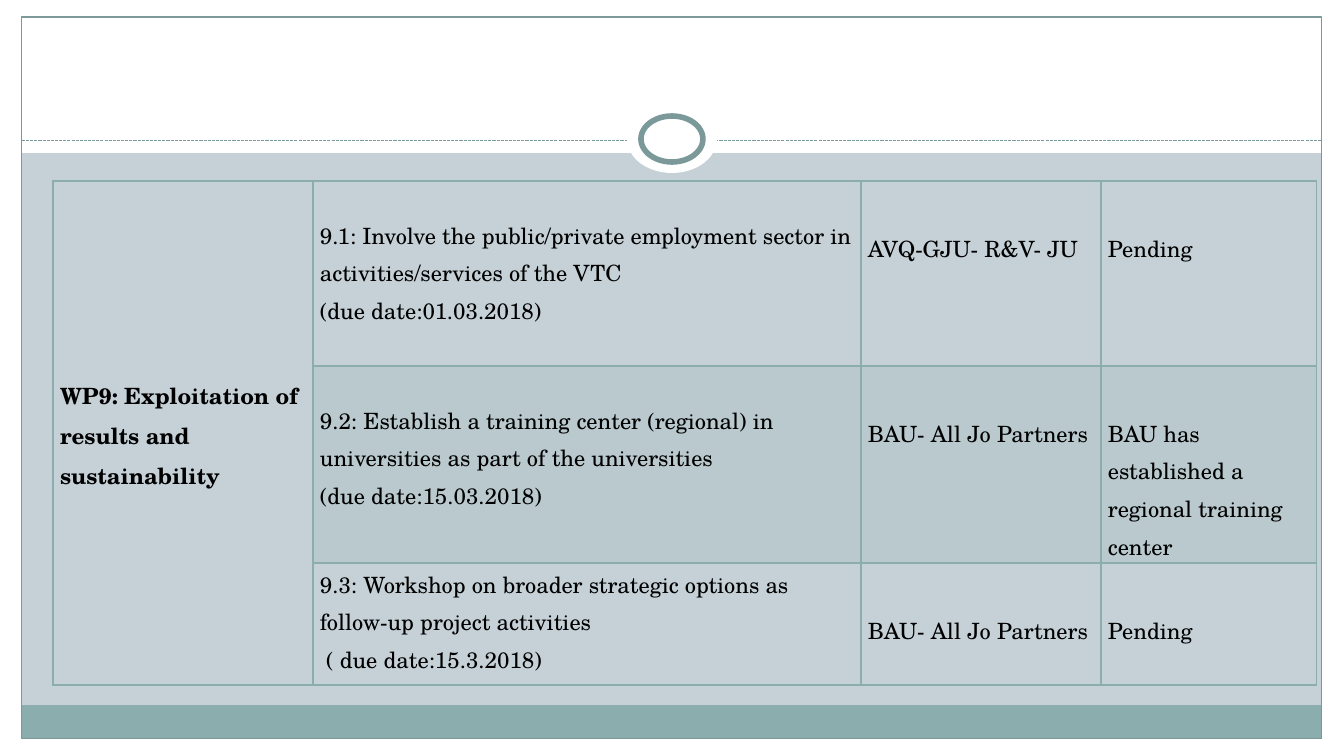
from dataclasses import dataclass

from lxml import etree
from pptx import Presentation
from pptx.dml.color import RGBColor
from pptx.enum.dml import MSO_LINE
from pptx.enum.shapes import MSO_CONNECTOR, MSO_SHAPE
from pptx.enum.text import MSO_ANCHOR, PP_ALIGN
from pptx.oxml.ns import qn
from pptx.util import Pt

RECTANGLE = MSO_SHAPE.RECTANGLE
OVAL = MSO_SHAPE.OVAL
STRAIGHT = MSO_CONNECTOR.STRAIGHT
SHORT_DASH = MSO_LINE.SQUARE_DOT
LEFT = PP_ALIGN.LEFT
TOP = MSO_ANCHOR.TOP
MIDDLE = MSO_ANCHOR.MIDDLE

PX_PER_INCH = 100.8
BLANK_LAYOUT = 6


@dataclass(frozen=True)
class Theme:
    page: str = "C5D1D7"
    white: str = "FFFFFF"
    accent: str = "8CADAE"
    outline: str = "7C999A"
    ink: str = "000000"
    font: str = "TeX Gyre Schola"
    text_size: int = 16
    hairline: float = 0.75
    ring_line: int = 4
    border: int = 1
    heavy_border: int = 2
    line_spacing: float = 1.15


@dataclass(frozen=True)
class Box:
    left: int
    top: int
    width: int
    height: int

    def emu(self):
        return [px(value) for value in (self.left, self.top, self.width, self.height)]


THEME = Theme()
PAGE = Box(0, 0, 1344, 756)
COLUMN_WIDTHS = (260, 548, 240, 216)
ROW_HEIGHTS = (185, 197, 122)
WORK_PACKAGE = "WP9: Exploitation of results and sustainability"
# Activity lines, responsible partners, status
ACTIVITIES = (
    (
        ("9.1: Involve the public/private employment sector in activities/services of the VTC",
         "(due date:01.03.2018)"),
        "AVQ-GJU- R&V- JU",
        "Pending",
    ),
    (
        ("9.2: Establish a training center (regional) in universities as part of the universities",
         "(due date:15.03.2018)"),
        "BAU- All Jo Partners",
        "BAU has established a regional training center",
    ),
    (
        ("9.3: Workshop on broader strategic options as follow‐up project activities",
         " ( due date:15.3.2018)"),
        "BAU- All Jo Partners",
        "Pending",
    ),
)
ACTIVITY_TOPS = (33, 33, 0)
DETAIL_TOP = 46


def px(value):
    return round(value * 914400 / PX_PER_INCH)


def rgb(name):
    return RGBColor.from_string(name)


def add_figure(page, kind, box, fill=None, line=None, weight=THEME.hairline):
    figure = page.shapes.add_shape(kind, *box.emu())
    figure.shadow.inherit = False
    if fill:
        figure.fill.solid()
        figure.fill.fore_color.rgb = rgb(fill)
    else:
        figure.fill.background()
    if line:
        figure.line.color.rgb = rgb(line)
        figure.line.width = Pt(weight)
    else:
        figure.line.fill.background()


def add_frame(page, box):
    side, edge, header, footer = 22, 17, 153, 34
    inner = Box(box.left + side, box.top + edge, box.width - 2 * side, box.height - 2 * edge)
    right, bottom = inner.left + inner.width, inner.top + inner.height

    # White margins and header band
    for margin in (
        Box(box.left, bottom, box.width, edge),
        Box(box.left, box.top, box.width, header),
        Box(box.left, box.top, side, box.height),
        Box(right, box.top, side, box.height),
    ):
        add_figure(page, RECTANGLE, margin, fill=THEME.white)

    # Footer band and outline
    add_figure(page, RECTANGLE, Box(inner.left, bottom - footer, inner.width, footer),
               fill=THEME.accent)
    add_figure(page, RECTANGLE, inner, line=THEME.outline)

    # Dashed divider
    divider_y = px(box.top + 141)
    divider = page.shapes.add_connector(STRAIGHT, px(inner.left), divider_y, px(right), divider_y)
    divider.line.color.rgb = rgb(THEME.outline)
    divider.line.width = Pt(THEME.hairline)
    divider.line.dash_style = SHORT_DASH
    etree.SubElement(divider._element.spPr, qn("a:effectLst"))

    # Ring on the divider
    center_x, center_y = box.left + box.width // 2, box.top + 139
    for width, height, line in ((90, 68, None), (62, 46, THEME.outline)):
        ring = Box(center_x - width // 2, center_y - height // 2, width, height)
        add_figure(page, OVAL, ring, THEME.white, line, THEME.ring_line)


def set_borders(cell, bottom):
    properties = cell._tc.get_or_add_tcPr()
    weights = {"lnL": THEME.border, "lnR": THEME.border, "lnT": THEME.border, "lnB": bottom}
    for tag, weight in weights.items():
        border = etree.SubElement(properties, qn(f"a:{tag}"), w=str(Pt(weight)))
        fill = etree.SubElement(border, qn("a:solidFill"))
        etree.SubElement(fill, qn("a:srgbClr"), val=THEME.accent)


def set_fill(cell, tinted):
    if not tinted:
        cell.fill.background()
        return
    cell.fill.solid()
    cell.fill.fore_color.rgb = rgb(THEME.accent)
    color = cell._tc.tcPr.find(f"{qn('a:solidFill')}/{qn('a:srgbClr')}")
    etree.SubElement(color, qn("a:alpha"), val="20000")


def write_cell(cell, lines, top=0, bold=False, anchor=TOP):
    cell.margin_left = cell.margin_right = px(7)
    cell.margin_top, cell.margin_bottom = px(top), 0
    cell.vertical_anchor = anchor
    cell.text_frame.text = "\n".join(lines)
    for para in cell.text_frame.paragraphs:
        para.alignment = LEFT
        para.line_spacing = THEME.line_spacing
        for span in para.runs:
            span.font.name = THEME.font
            span.font.size = Pt(THEME.text_size)
            span.font.bold = bold
            span.font.color.rgb = rgb(THEME.ink)


def add_activity_table(page, box):
    table = page.shapes.add_table(len(ROW_HEIGHTS), len(COLUMN_WIDTHS), *box.emu()).table
    table.first_row = table.horz_banding = False
    for column, width in zip(table.columns, COLUMN_WIDTHS):
        column.width = px(width)
    for row, height in zip(table.rows, ROW_HEIGHTS):
        row.height = px(height)

    # Borders and the tinted middle row
    for row_index, row in enumerate(table.rows):
        for column_index, cell in enumerate(row.cells):
            heavy = row_index == 0 or column_index == 0
            set_borders(cell, THEME.heavy_border if heavy else THEME.border)
            set_fill(cell, row_index == 1 and column_index > 0)

    # Work package beside its activities
    package_cell = table.cell(0, 0)
    package_cell.merge(table.cell(len(ROW_HEIGHTS) - 1, 0))
    write_cell(package_cell, [WORK_PACKAGE], bold=True, anchor=MIDDLE)
    for row_index, (activity, partners, status) in enumerate(ACTIVITIES):
        write_cell(table.cell(row_index, 1), activity, ACTIVITY_TOPS[row_index])
        write_cell(table.cell(row_index, 2), [partners], DETAIL_TOP)
        write_cell(table.cell(row_index, 3), [status], DETAIL_TOP)


def main():
    deck = Presentation()
    deck.slide_width, deck.slide_height = px(PAGE.width), px(PAGE.height)
    page = deck.slides.add_slide(deck.slide_layouts[BLANK_LAYOUT])
    page.background.fill.solid()
    page.background.fill.fore_color.rgb = rgb(THEME.page)
    add_frame(page, PAGE)
    add_activity_table(page, Box(53, 181, sum(COLUMN_WIDTHS), sum(ROW_HEIGHTS)))
    deck.save("out.pptx")


if __name__ == "__main__":
    main()
